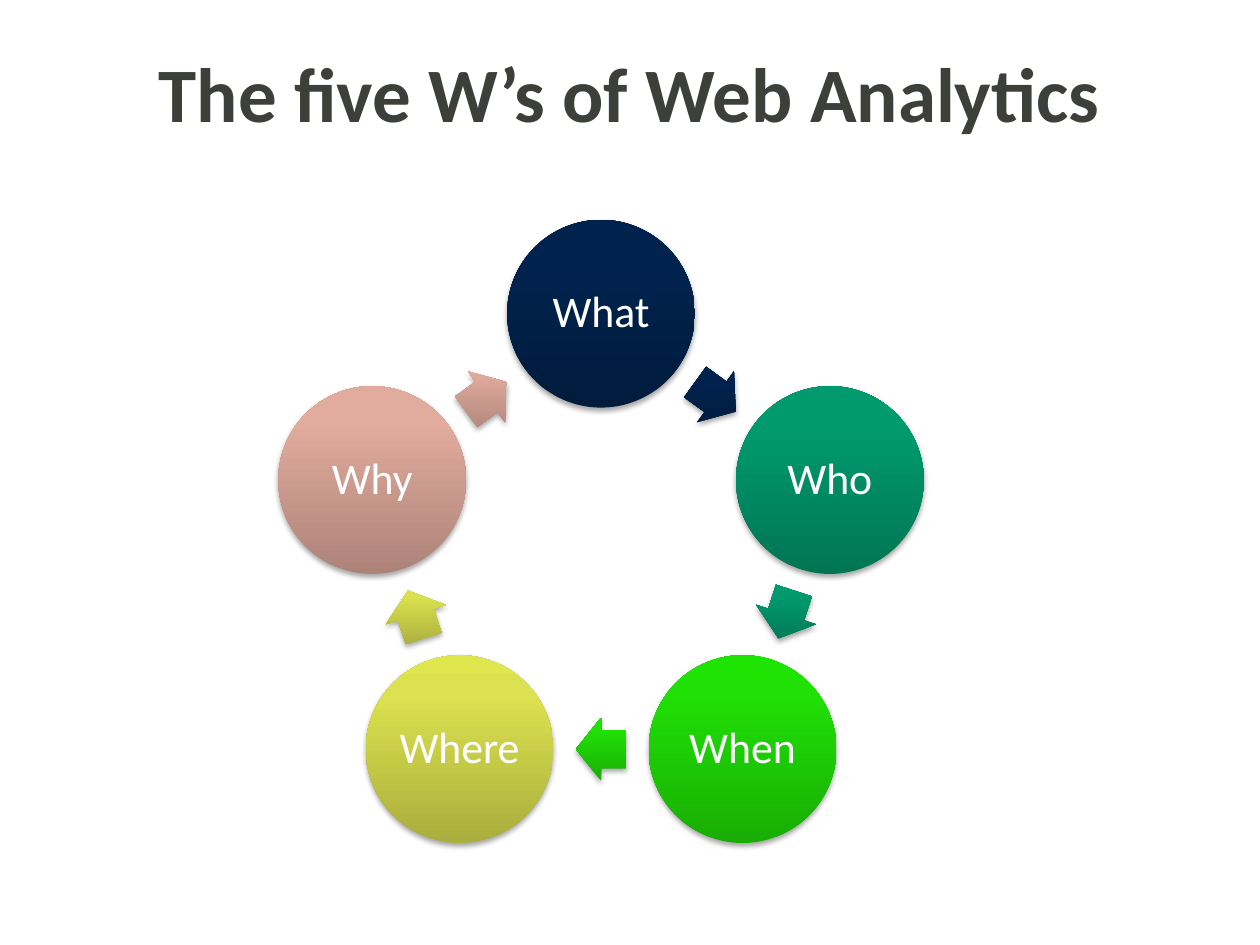
import math

import pptx
import pptx.dml.color
import pptx.enum.shapes
import pptx.enum.text
import pptx.oxml
import pptx.util

TITLE = "The five W’s of Web Analytics"
# Label, then gradient colours from bottom to top
STEPS = [
    ("What", ("001B3C", "00234E", "00234E")),
    ("Who", ("007654", "009A6E", "009A6E")),
    ("When", ("19AD04", "20E005", "1DE501")),
    ("Where", ("AAAE3D", "DCE24F", "E0E64D")),
    ("Why", ("AD8379", "E1AB9D", "E3AB9C")),
]
STOPS = (0, 80, 100)
FONT = "Calibri"
WIDTH, HEIGHT = 10, 7.5
CENTRE_X, CENTRE_Y, RADIUS = 4.77, 4.4, 1.91
CIRCLE = 1.49
ARROW_LENGTH, ARROW_WIDTH = 0.4, 0.5
NAMESPACE = 'xmlns:a="http://schemas.openxmlformats.org/drawingml/2006/main"'
Shape = pptx.enum.shapes.MSO_SHAPE


def color(value):
    return pptx.dml.color.RGBColor.from_string(value)


def write(shape, text, size, ink, bold=False, inset=0.1, spacing=1.0):
    frame = shape.text_frame
    frame.word_wrap = True
    frame.vertical_anchor = pptx.enum.text.MSO_ANCHOR.MIDDLE
    frame.margin_left = frame.margin_right = pptx.util.Inches(inset)
    frame.margin_top = frame.margin_bottom = pptx.util.Inches(min(inset, 0.05))
    para = frame.paragraphs[0]
    para.alignment = pptx.enum.text.PP_ALIGN.CENTER
    para.line_spacing = spacing
    span = para.add_run()
    span.text = text
    span.font.name = FONT
    span.font.size = pptx.util.Pt(size)
    span.font.bold = bold
    span.font.color.rgb = color(ink)


def add_glossy(page, kind, centre, width, height, colors):
    """Add a shape around its centre with an upright gradient and a soft shadow."""
    x, y = centre
    shape = page.shapes.add_shape(
        kind, *map(pptx.util.Inches, (x - width / 2, y - height / 2, width, height)))
    shape.line.fill.background()
    shape.shadow.inherit = False
    stops = "".join(
        f'<a:gs pos="{stop * 1000}"><a:srgbClr val="{value}"/></a:gs>'
        for stop, value in zip(STOPS, colors))
    gradient = pptx.oxml.parse_xml(
        f'<a:gradFill {NAMESPACE} rotWithShape="0"><a:gsLst>{stops}</a:gsLst>'
        '<a:lin ang="16200000" scaled="0"/></a:gradFill>')
    properties = shape._element.spPr
    properties.find(pptx.oxml.ns.qn("a:prstGeom")).addnext(gradient)
    blur, distance = pptx.util.Pt(3.1), pptx.util.Pt(1.8)
    properties.find(pptx.oxml.ns.qn("a:effectLst")).append(pptx.oxml.parse_xml(
        f'<a:outerShdw {NAMESPACE} blurRad="{blur}" dist="{distance}" dir="5400000" '
        'rotWithShape="0"><a:srgbClr val="000000"><a:alpha val="35000"/></a:srgbClr>'
        '</a:outerShdw>'))
    return shape


def on_ring(angle, radius):
    turn = math.radians(angle)
    return CENTRE_X + radius * math.sin(turn), CENTRE_Y - radius * math.cos(turn)


deck = pptx.Presentation()
deck.slide_width = pptx.util.Inches(WIDTH)
deck.slide_height = pptx.util.Inches(HEIGHT)
page = deck.slides.add_slide(deck.slide_layouts[6])

# Title
box = page.shapes.add_textbox(*map(pptx.util.Inches, (0.5, 0.25, 9, 0.95)))
write(box, TITLE, 44, "3D3F3A", bold=True)

# Cycle: each circle is followed by an arrow halfway to the next one
step_angle = 360 / len(STEPS)
arrow_radius = RADIUS * math.cos(math.radians(step_angle / 2))
for index, (label, colors) in enumerate(STEPS):
    angle = index * step_angle
    circle = add_glossy(page, Shape.OVAL, on_ring(angle, RADIUS), CIRCLE, CIRCLE, colors)
    write(circle, label, 25, "FFFFFF", inset=0.03, spacing=0.9)
    middle = angle + step_angle / 2
    arrow = add_glossy(page, Shape.RIGHT_ARROW, on_ring(middle, arrow_radius),
                       ARROW_LENGTH, ARROW_WIDTH, colors)
    arrow.rotation = middle
    arrow.adjustments[0], arrow.adjustments[1] = 0.6, 0.5

deck.save("out.pptx")
